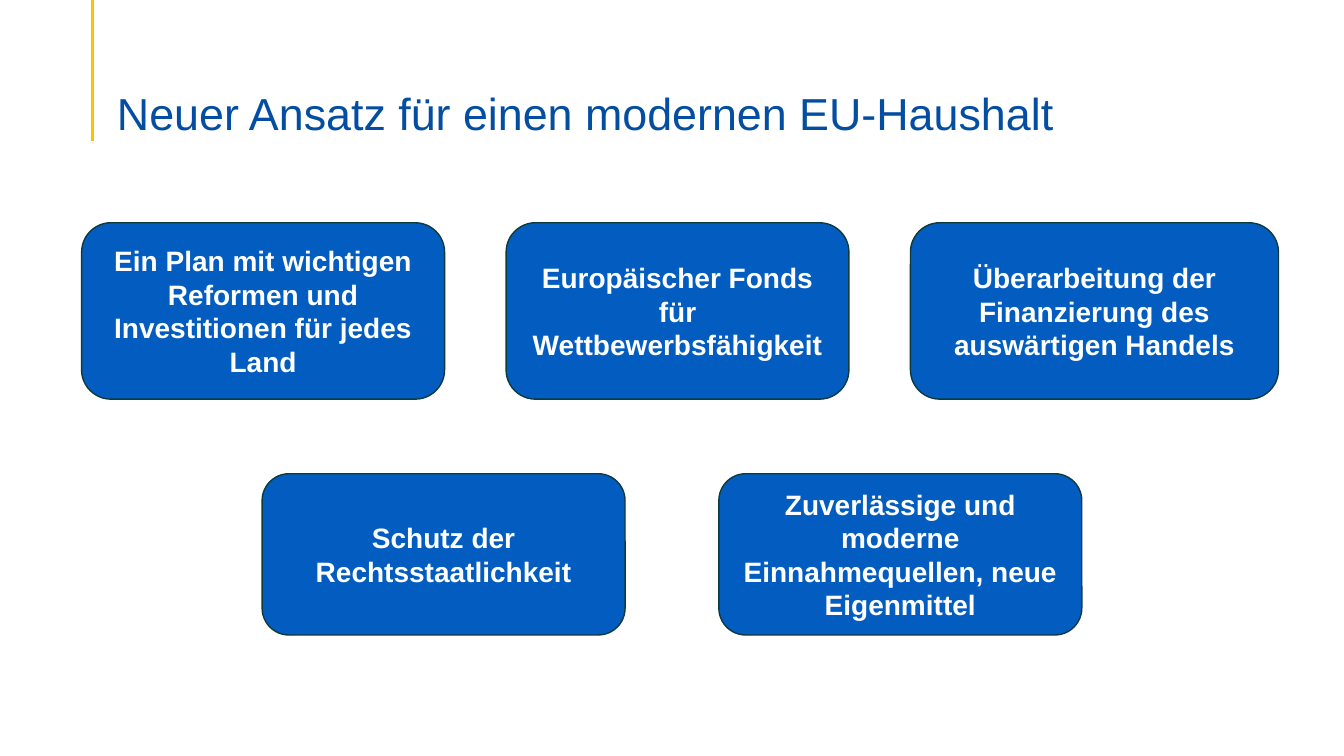
from lxml.etree import SubElement
from pptx import Presentation
from pptx.dml.color import RGBColor
from pptx.enum.shapes import MSO_CONNECTOR, MSO_SHAPE
from pptx.enum.text import MSO_ANCHOR, PP_ALIGN
from pptx.oxml.ns import qn
from pptx.util import Inches, Pt

COLORS = {
    "title": "034EA2",
    "box": "035DC1",
    "outline": "0D3A3D",
    "accent": "FFC000",
    "white": "FFFFFF",
}


def color(name):
    return RGBColor.from_string(COLORS[name])


def write_text(frame, text, size, fill, bold=False, align=PP_ALIGN.LEFT,
               anchor=MSO_ANCHOR.MIDDLE, line_spacing=1.0):
    frame.word_wrap = True
    frame.vertical_anchor = anchor
    para = frame.paragraphs[0]
    para.alignment = align
    para.line_spacing = line_spacing
    span = para.add_run()
    span.text = text
    span.font.name = "Arial"
    span.font.size = Pt(size)
    span.font.bold = bold
    span.font.color.rgb = color(fill)


deck = Presentation()
deck.slide_width, deck.slide_height = Inches(13.33), Inches(7.5)
page = deck.slides.add_slide(deck.slide_layouts[5])

# Accent line beside the title
accent = page.shapes.add_connector(
    MSO_CONNECTOR.STRAIGHT, Inches(0.92), Inches(0), Inches(0.92), Inches(1.4))
accent.line.color.rgb = color("accent")
accent.line.width = Pt(2.25)
SubElement(accent._element.spPr, qn("a:effectLst"))

title = page.shapes.title
title.left, title.top = Inches(1.06), Inches(0.53)
title.width, title.height = Inches(11.5), Inches(0.86)
title.text_frame.margin_bottom = 0
write_text(title.text_frame, "Neuer Ansatz für einen modernen EU-Haushalt",
           size=32, fill="title", anchor=MSO_ANCHOR.BOTTOM, line_spacing=0.9)

# Each row: top, height, gap, left edge, then (width, text) per box
rows = [
    (2.21, 1.75, 0.61, 0.81, [
        (3.6, "Ein Plan mit wichtigen Reformen und Investitionen für jedes Land"),
        (3.4, "Europäischer Fonds für Wettbewerbsfähigkeit"),
        (3.65, "Überarbeitung der Finanzierung des auswärtigen Handels"),
    ]),
    (4.7, 1.6, 0.93, 2.6, [
        (3.6, "Schutz der Rechtsstaatlichkeit"),
        (3.6, "Zuverlässige und moderne Einnahmequellen, neue Eigenmittel"),
    ]),
]
for top, height, gap, left, boxes in rows:
    for width, text in boxes:
        box = page.shapes.add_shape(
            MSO_SHAPE.ROUNDED_RECTANGLE,
            Inches(left), Inches(top), Inches(width), Inches(height))
        box.shadow.inherit = False
        box.fill.solid()
        box.fill.fore_color.rgb = color("box")
        box.line.color.rgb = color("outline")
        box.line.width = Pt(1)
        write_text(box.text_frame, text, size=20, fill="white", bold=True,
                   align=PP_ALIGN.CENTER)
        left += width + gap

deck.save("out.pptx")
